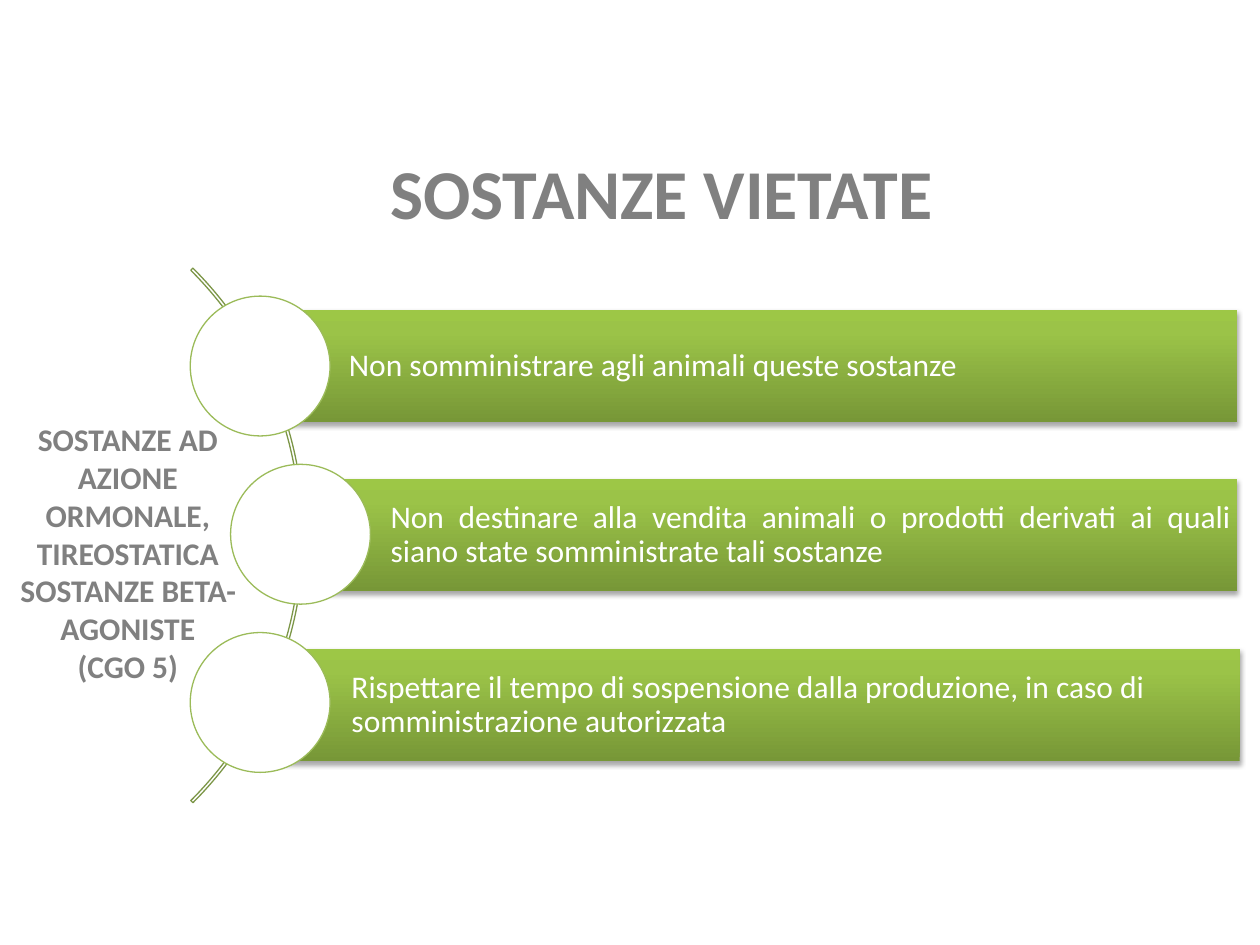
from lxml import etree
from pptx import Presentation
from pptx.dml.color import RGBColor
from pptx.enum.shapes import MSO_SHAPE
from pptx.enum.text import MSO_ANCHOR, PP_ALIGN
from pptx.oxml.ns import qn
from pptx.util import Inches, Pt

ARC, BAR, CIRCLE = MSO_SHAPE.BLOCK_ARC, MSO_SHAPE.RECTANGLE, MSO_SHAPE.OVAL
CENTER, JUSTIFY, LEFT = PP_ALIGN.CENTER, PP_ALIGN.JUSTIFY, PP_ALIGN.LEFT
MIDDLE = MSO_ANCHOR.MIDDLE

FONT = "Calibri"
COLORS = {
    "white": "FFFFFF", "gray": "808080", "shadow": "000000",
    "arc": "7C9647", "circle": "9BBB59",
    "dark": "779737", "mid": "9BC348", "light": "9DC746",
}
BAR_STOPS = [(0, "dark"), (80, "mid"), (100, "light")]

BAR_HEIGHT = 0.89
CIRCLE_SIZE = 1.11
CIRCLE_TOP, CIRCLE_PITCH = 2.35, 1.335

# Circle left, bar left, bar top, bar width, alignment, text
ROWS = [
    (1.51, 2.06, 2.46, 7.76, JUSTIFY,
     "Non somministrare agli animali queste sostanze"),
    (1.83, 2.39, 3.80, 7.43, JUSTIFY,
     "Non destinare alla vendita animali o prodotti derivati ai quali "
     "siano state somministrate tali sostanze"),
    (1.51, 2.08, 5.15, 7.76, LEFT,
     "Rispettare il tempo di sospensione dalla produzione, in caso di "
     "somministrazione autorizzata"),
]
SUBJECT = [
    "SOSTANZE AD AZIONE ORMONALE, TIREOSTATICA",
    "SOSTANZE BETA-AGONISTE",
    "(CGO 5)",
]


def color(name):
    return RGBColor.from_string(COLORS[name])


def inches(box):
    return [Inches(value) for value in box]


def add_color_node(parent, name):
    return etree.SubElement(parent, qn("a:srgbClr"), val=COLORS[name])


def add_plain_shape(slide, kind, box):
    shape = slide.shapes.add_shape(kind, *inches(box))
    shape.shadow.inherit = False
    return shape


def write_paragraphs(frame, texts, size, color_name, alignment, spacing=1.0, bold=False):
    frame.word_wrap = True
    frame.vertical_anchor = MIDDLE
    for index, text in enumerate(texts):
        paragraph = frame.add_paragraph() if index else frame.paragraphs[0]
        paragraph.alignment = alignment
        paragraph.line_spacing = spacing
        run = paragraph.add_run()
        run.text = text
        run.font.name = FONT
        run.font.size = Pt(size)
        run.font.bold = bold
        run.font.color.rgb = color(color_name)


def style_bar(shape):
    """Vertical green gradient, no outline, soft shadow below."""
    shape.line.fill.background()
    shape.fill.gradient()
    shape.fill.gradient_angle = 90
    properties = shape._element.spPr
    stops = properties.find(qn("a:gradFill")).find(qn("a:gsLst"))
    for stop in list(stops):
        stops.remove(stop)
    for position, name in BAR_STOPS:
        stop = etree.SubElement(stops, qn("a:gs"), pos=str(position * 1000))
        add_color_node(stop, name)
    shadow = etree.SubElement(
        properties.find(qn("a:effectLst")), qn("a:outerShdw"),
        blurRad=str(Pt(3.1)), dist=str(Pt(1.8)), dir="5400000", rotWithShape="0")
    etree.SubElement(add_color_node(shadow, "shadow"), qn("a:alpha"), val="35000")


def add_arc(slide, box):
    arc = add_plain_shape(slide, ARC, box)
    for index, value in enumerate((189, 27, 0.004)):
        arc.adjustments[index] = value
    arc.fill.background()
    arc.line.color.rgb = color("arc")
    arc.line.width = Pt(0.75)


def add_bar(slide, box, text, alignment):
    bar = add_plain_shape(slide, BAR, box)
    style_bar(bar)
    frame = bar.text_frame
    frame.margin_left = Inches(0.71)
    frame.margin_right = Inches(0.05)
    write_paragraphs(frame, [text], 18, "white", alignment, spacing=0.9)


def add_circle(slide, box):
    circle = add_plain_shape(slide, CIRCLE, box)
    circle.fill.solid()
    circle.fill.fore_color.rgb = color("white")
    circle.line.color.rgb = color("circle")
    circle.line.width = Pt(0.75)


def add_title(slide, box):
    frame = slide.shapes.add_textbox(*inches(box)).text_frame
    write_paragraphs(frame, ["SOSTANZE VIETATE"], 40, "gray", CENTER,
                     spacing=1.5, bold=True)


def add_subject(slide, box):
    frame = slide.shapes.add_textbox(*inches(box)).text_frame
    frame.margin_bottom = Inches(0.5)
    write_paragraphs(frame, SUBJECT, 18, "gray", CENTER, bold=True)


def main():
    presentation = Presentation()
    presentation.slide_width = Inches(10)
    presentation.slide_height = Inches(7.5)
    slide = presentation.slides.add_slide(presentation.slide_layouts[6])

    # Curved list
    add_arc(slide, (-3.59, 1.25, 6, 6))
    for index, (circle_left, left, top, width, alignment, text) in enumerate(ROWS):
        add_bar(slide, (left, top, width, BAR_HEIGHT), text, alignment)
        circle_top = CIRCLE_TOP + index * CIRCLE_PITCH
        add_circle(slide, (circle_left, circle_top, CIRCLE_SIZE, CIRCLE_SIZE))

    # Headings
    add_title(slide, (0.75, 0.76, 9, 1.18))
    add_subject(slide, (-0.12, 3.36, 2.27, 2.5))

    presentation.save("out.pptx")


if __name__ == "__main__":
    main()
